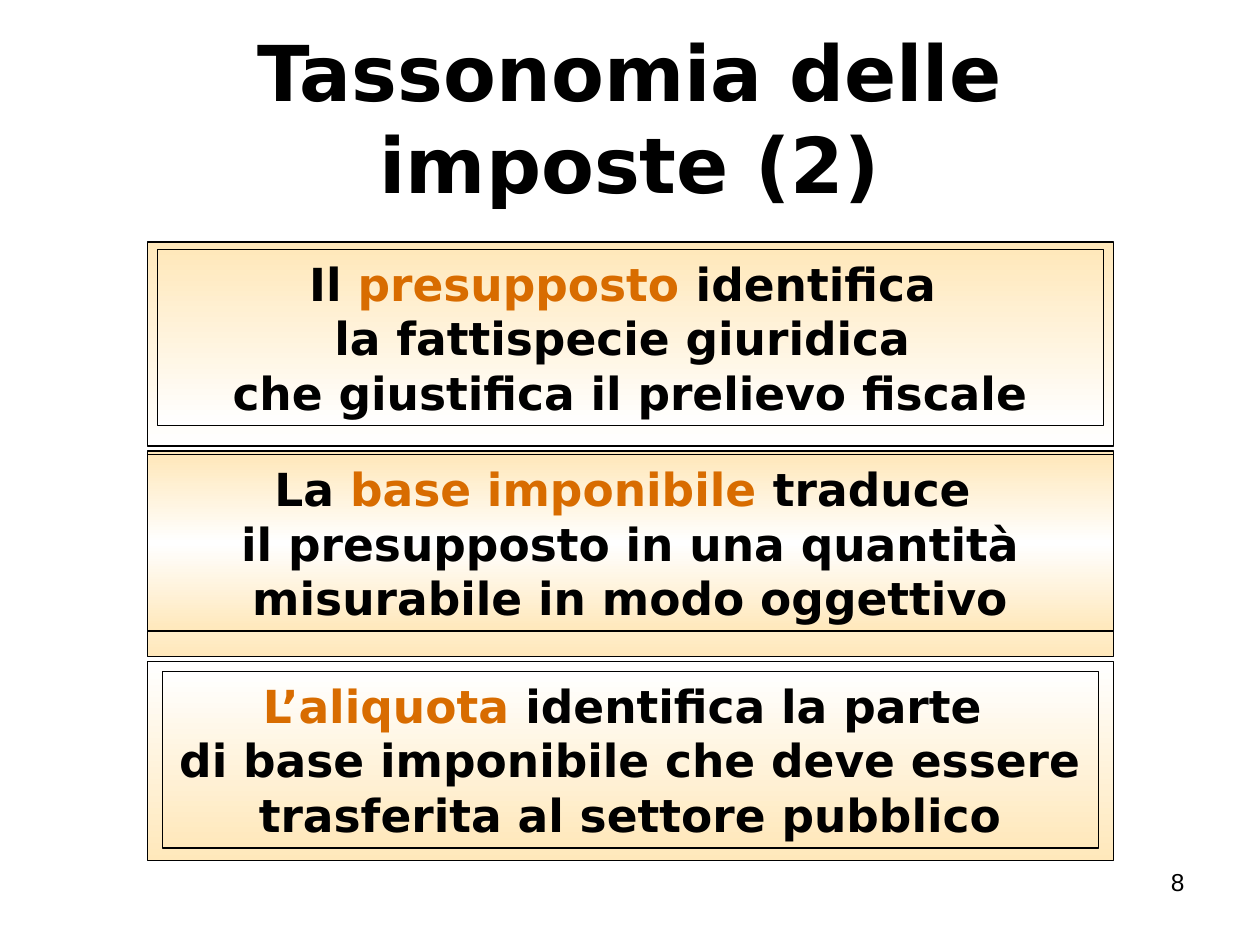
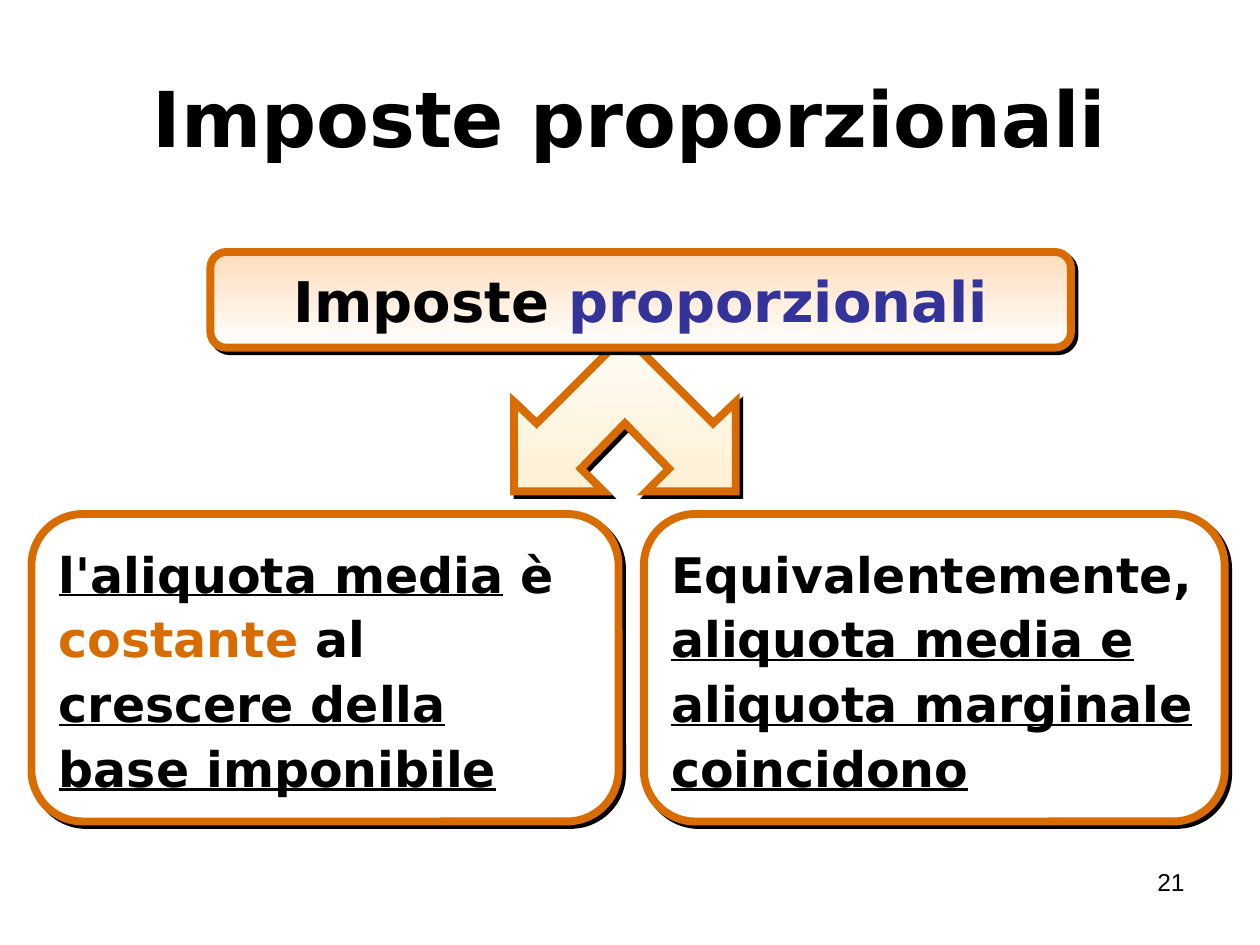
from copy import deepcopy

from lxml import etree
from pptx import Presentation
from pptx.dml.color import RGBColor
from pptx.enum.shapes import MSO_SHAPE
from pptx.enum.text import MSO_ANCHOR, PP_ALIGN
from pptx.oxml.ns import qn
from pptx.util import Inches, Pt

RECT, ROUND_RECT = MSO_SHAPE.RECTANGLE, MSO_SHAPE.ROUNDED_RECTANGLE
TOP, MIDDLE = MSO_ANCHOR.TOP, MSO_ANCHOR.MIDDLE
LEFT, CENTER, RIGHT = PP_ALIGN.LEFT, PP_ALIGN.CENTER, PP_ALIGN.RIGHT

BLACK = RGBColor(0x00, 0x00, 0x00)
WHITE = RGBColor(0xFF, 0xFF, 0xFF)
CREAM = RGBColor(0xFF, 0xE8, 0xBB)
PEACH = RGBColor(0xFF, 0xDD, 0xBB)
ARROW_TOP = RGBColor(0xFF, 0xFC, 0xF6)
ARROW_BOTTOM = RGBColor(0xFF, 0xF0, 0xD3)
ORANGE = RGBColor(0xD8, 0x6C, 0x00)
INDIGO = RGBColor(0x33, 0x33, 0x99)

HEAD_FONT, NUMBER_FONT = "DejaVu Sans", "Arial"


# Shared helpers
def write(tf, runs, size, align=CENTER, anchor=TOP, font=HEAD_FONT, bold=True, spacing=None):
    """Fill a frame with one paragraph; a run is (text, colour, underlined)."""
    tf.word_wrap = True
    tf.vertical_anchor = anchor
    p = tf.paragraphs[0]
    p.alignment = align
    if spacing:
        p.line_spacing = spacing
    for text, color, underlined in runs:
        for i, line in enumerate(text.split("\n")):
            if i:
                p.add_line_break()
            r = p.add_run()
            r.text = line
            r.font.name, r.font.size, r.font.bold = font, Pt(size), bold
            r.font.color.rgb = color
            if underlined:
                r.font.underline = True


def paint(sp, colors, line, width):
    """Fill with one colour or an even top-to-bottom gradient, and outline."""
    if len(colors) == 1:
        sp.fill.solid()
        sp.fill.fore_color.rgb = colors[0]
    else:
        sp.fill.gradient()
        sp.fill.gradient_angle = 270
        stops = sp._element.spPr.find(qn("a:gradFill")).find(qn("a:gsLst"))
        while len(stops) < len(colors):
            stops.append(deepcopy(stops[-1]))
        for i, (stop, color) in enumerate(zip(sp.fill.gradient_stops, colors)):
            stop.color.rgb = color
            stop.position = i / (len(colors) - 1)
    sp.line.color.rgb = line
    sp.line.width = Pt(width)
    sp.shadow.inherit = False


def paint_raised(sp, colors):
    """Thick orange outline with a hard black shadow to the lower right."""
    paint(sp, colors, ORANGE, 4.5)
    effects = sp._element.spPr.find(qn("a:effectLst"))
    shadow = etree.SubElement(effects, qn("a:outerShdw"), dist=str(Pt(2.8)),
                              dir="2700000", algn="ctr", rotWithShape="0")
    etree.SubElement(shadow, qn("a:srgbClr"), val=str(BLACK))


def add_box(shapes, kind, box):
    return shapes.add_shape(kind, *map(Inches, box))


def add_slide(prs, title, number):
    s = prs.slides.add_slide(prs.slide_layouts[6])
    tf = s.shapes.add_textbox(*map(Inches, (0.5, 0.3, 9, 1.25))).text_frame
    write(tf, [(title, BLACK, False)], 44, anchor=MIDDLE)
    tf = s.shapes.add_textbox(*map(Inches, (7.17, 6.83, 2.33, 0.52))).text_frame
    write(tf, [(number, BLACK, False)], 14, RIGHT, font=NUMBER_FONT, bold=False)
    return s


# Slide of stacked definitions
def add_definition(s, box, inset_x, inset_y, colors, runs):
    """Gradient panel holding a second panel with the text."""
    x, y, w, _ = box
    shapes = s.shapes.add_group_shape().shapes
    paint(add_box(shapes, RECT, box), colors, BLACK, 0.75)
    inner = add_box(shapes, RECT, (x + inset_x, y + inset_y, w - 2 * inset_x, 1.4))
    paint(inner, colors, BLACK, 0.75)
    write(inner.text_frame, runs, 26)


def build_taxonomy(prs):
    s = add_slide(prs, "Tassonomia delle imposte (2)", "8")
    definitions = [
        (1.62, 0.08, 0.06, [CREAM, WHITE],
         [("Il ", BLACK, False), ("presupposto", ORANGE, False),
          (" identifica \nla fattispecie giuridica \nche giustifica il prelievo fiscale",
           BLACK, False)]),
        (1.63, 0, 0.03, [CREAM, WHITE, CREAM],
         [("La ", BLACK, False), ("base imponibile", ORANGE, False),
          (" traduce \nil presupposto in una quantità misurabile in modo oggettivo",
           BLACK, False)]),
        (1.58, 0.12, 0.08, [WHITE, CREAM],
         [("L’aliquota", ORANGE, False),
          (" identifica la parte \ndi base imponibile che deve essere "
           "trasferita al settore pubblico", BLACK, False)]),
    ]
    y = 1.92
    for height, inset_x, inset_y, colors, runs in definitions:
        add_definition(s, (1.17, y, 7.67, height), inset_x, inset_y, colors, runs)
        y += height + 0.04


# Slide of a heading that splits into two statements
def add_split_arrow(shapes, x, y):
    """Two-headed arrow, symmetric about x, with its apex at (x, y)."""
    half = [(0.7, 0.7), (0.88, 0.53), (0.88, 1.24), (0.17, 1.24), (0.35, 1.06)]
    outline = [(0, 0), *half, (0, 0.7), *((-dx, dy) for dx, dy in reversed(half))]
    points = [(Inches(x + dx), Inches(y + dy)) for dx, dy in outline]
    fb = shapes.build_freeform(*points[0])
    fb.add_line_segments(points[1:], close=True)
    sp = fb.convert_to_shape()
    paint_raised(sp, [ARROW_TOP, ARROW_BOTTOM])
    etree.SubElement(sp._element.spPr.find(qn("a:ln")), qn("a:miter"), lim="800000")


def add_raised_box(shapes, box, colors, runs, size, align=LEFT, spacing=None):
    sp = add_box(shapes, ROUND_RECT, box)
    sp.adjustments[0] = 0.167
    paint_raised(sp, colors)
    write(sp.text_frame, runs, size, align, MIDDLE, spacing=spacing)


def build_proportional(prs):
    s = add_slide(prs, "Imposte proporzionali", "21")

    # Heading with the arrow behind it
    shapes = s.shapes.add_group_shape().shapes
    add_split_arrow(shapes, 4.96, 2.66)
    add_raised_box(shapes, (1.67, 2, 6.83, 0.76), [PEACH, WHITE],
                   [("Imposte ", BLACK, False), ("proporzionali", INDIGO, False)],
                   32, CENTER)

    # Statements
    statements = [
        (0.25, 4.66, [("l'aliquota media", BLACK, True), (" è ", BLACK, False),
                      ("costante ", ORANGE, False), ("al ", BLACK, False),
                      ("crescere della base imponibile", BLACK, True)]),
        (5.11, 4.61, [("Equivalentemente, ", BLACK, False),
                      ("aliquota media e aliquota marginale", BLACK, True),
                      (" ", BLACK, False), ("coincidono", BLACK, True)]),
    ]
    for x, width, runs in statements:
        add_raised_box(s.shapes, (x, 4.08, width, 2.44), [WHITE], runs, 28, spacing=1.1)


def main():
    prs = Presentation()
    prs.slide_width, prs.slide_height = Inches(10), Inches(7.5)
    build_taxonomy(prs)
    build_proportional(prs)
    prs.save("out.pptx")


if __name__ == "__main__":
    main()
